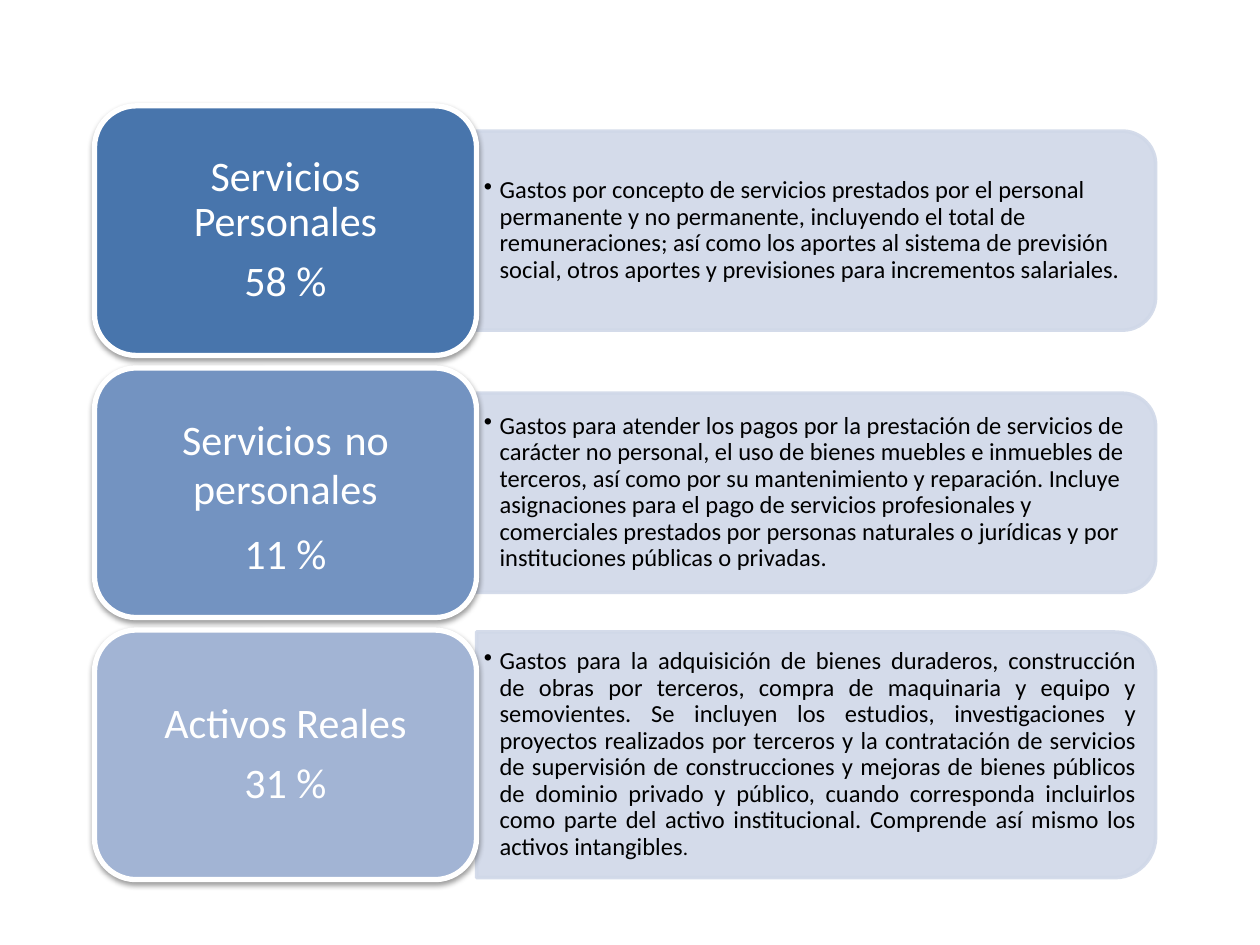
from pptx import Presentation
from pptx.util import Pt
from pptx.dml.color import RGBColor
from pptx.enum.shapes import MSO_SHAPE as Shape
from pptx.enum.text import MSO_ANCHOR as Anchor, PP_ALIGN as Align
from pptx.oxml import parse_xml
from pptx.oxml.ns import nsdecls

THEME = {
    "font": "Calibri", "label_size": 24, "detail_size": 14,
    "white": RGBColor.from_string("FFFFFF"), "black": RGBColor.from_string("000000"),
    "panel": RGBColor.from_string("D0D8E8"),
}

# Label lines and detail are lists of (text, size) spans
BIG, SMALL = THEME["label_size"], THEME["detail_size"]
ROWS = [
    {"color": "4875AC", "panel_height": 113.8, "align": None,
     "label": [[("Servicios Personales", BIG)], [("58 %", BIG)]],
     "detail": [("Gastos por concepto de servicios prestados por el personal permanente y no "
                 "permanente, incluyendo el total de remuneraciones; así como los aportes al "
                 "sistema de previsión social, otros aportes y previsiones para incrementos "
                 "salariales.", SMALL)]},
    {"color": "7393C1", "panel_height": 113.8, "align": None,
     "label": [[("Servicios", BIG), (" ", 32), ("no personales", BIG)], [("11 %", BIG)]],
     "detail": [("Gastos para atender los pagos por la prestación de servicios de carácter no "
                 "personal, el uso de bienes muebles e inmuebles de terceros, así como por su "
                 "mantenimiento y reparación. Incluye asignaciones para el pago de servicios "
                 "profesionales y comerciales prestados por personas naturales o jurídicas y por "
                 "instituciones públicas o privadas.", SMALL)]},
    {"color": "A2B4D4", "panel_height": 140.4, "align": Align.JUSTIFY,
     "label": [[("Activos Reales", BIG)], [("31 %", BIG)]],
     "detail": [("Gastos para la adquisición de bienes duraderos, construcción de obras por "
                 "terceros, compra de maquinaria y equipo y semovientes. Se incluyen los "
                 "estudios, investigaciones y proyectos realizados por terceros y la "
                 "contratación de servicios de supervisión de construcciones y mejoras de bienes "
                 "públicos de dominio privado y público, cuando corresponda incluirlos como "
                 "parte del activo institucional. Comprende así mismo los activos intangibles",
                 SMALL), (". ", 12)]},
]

LEFT, TOP, PITCH = 54, 60.5, 149.76
LABEL_WIDTH, LABEL_HEIGHT, PANEL_WIDTH = 218.3, 142.6, 388.1
CORNER_INSET = 0.048  # share of the height that the round corners take from the text area


def add_text(page, bounds, margins, paragraphs, color, gap, formats):
    box = page.shapes.add_textbox(*map(Pt, bounds))
    frame = box.text_frame
    frame.word_wrap = True
    frame.vertical_anchor = Anchor.MIDDLE
    frame.margin_left = frame.margin_right = Pt(margins[0])
    frame.margin_top = frame.margin_bottom = Pt(margins[1])
    for index, spans in enumerate(paragraphs):
        para = frame.add_paragraph() if index else frame.paragraphs[0]
        for name, value in formats.items():
            setattr(para, name, value)
        para.line_spacing = 0.9
        para.space_after = Pt(round(gap * max(size for _, size in spans), 1))
        for text, size in spans:
            span = para.add_run()
            span.text = text
            for name, value in {"name": THEME["font"], "size": Pt(size)}.items():
                setattr(span.font, name, value)
            span.font.color.rgb = color
    return box


def paint(shape, fill, line, width):
    shape.shadow.inherit = False
    shape.fill.solid()
    shape.fill.fore_color.rgb = fill
    shape.line.color.rgb = line
    shape.line.width = Pt(width)


deck = Presentation()
deck.slide_width, deck.slide_height = Pt(720), Pt(540)
page = deck.slides.add_slide(deck.slide_layouts[6])

for index, row in enumerate(ROWS):
    top = TOP + index * PITCH
    middle = top + LABEL_HEIGHT / 2
    panel_left = LEFT + LABEL_WIDTH
    height = row["panel_height"]

    # Detail panel: turned so that its round corners point right
    panel = page.shapes.add_shape(
        Shape.ROUND_2_SAME_RECTANGLE,
        Pt(panel_left + (PANEL_WIDTH - height) / 2), Pt(middle - PANEL_WIDTH / 2),
        Pt(height), Pt(PANEL_WIDTH))
    panel.rotation = 90
    paint(panel, THEME["panel"], THEME["panel"], 2)
    for color in panel._element.spPr.xpath(".//a:srgbClr"):
        color.append(parse_xml(f'<a:alpha {nsdecls("a")} val="90000"/>'))

    # Detail text with a bullet
    inset = CORNER_INSET * height
    detail = add_text(
        page, (panel_left, middle - height / 2 + inset, PANEL_WIDTH - inset, height - 2 * inset),
        (4.2, 2.1), [row["detail"]], THEME["black"], 0.15,
        {"alignment": row["align"], "level": 1})
    properties = detail.text_frame.paragraphs[0]._p.get_or_add_pPr()
    properties.set("marL", str(Pt(9)))
    properties.set("indent", str(-Pt(9)))
    properties.append(parse_xml(f'<a:buChar {nsdecls("a")} char="•"/>'))

    # Label card with a soft shadow below
    card = page.shapes.add_shape(
        Shape.ROUNDED_RECTANGLE, Pt(LEFT), Pt(top), Pt(LABEL_WIDTH), Pt(LABEL_HEIGHT))
    paint(card, RGBColor.from_string(row["color"]), THEME["white"], 3)
    card._element.spPr.xpath("a:effectLst")[0].append(parse_xml(
        f'<a:outerShdw {nsdecls("a")} blurRad="{Pt(3.1)}" dist="{Pt(1.6)}" dir="5400000" '
        'rotWithShape="0"><a:srgbClr val="000000"><a:alpha val="38000"/></a:srgbClr>'
        '</a:outerShdw>'))

    # Label text
    inset = CORNER_INSET * LABEL_HEIGHT
    add_text(
        page, (LEFT + inset, top + inset, LABEL_WIDTH - 2 * inset, LABEL_HEIGHT - 2 * inset),
        (7.2, 3.6), row["label"], THEME["white"], 0.35, {"alignment": Align.CENTER})

deck.save("out.pptx")
